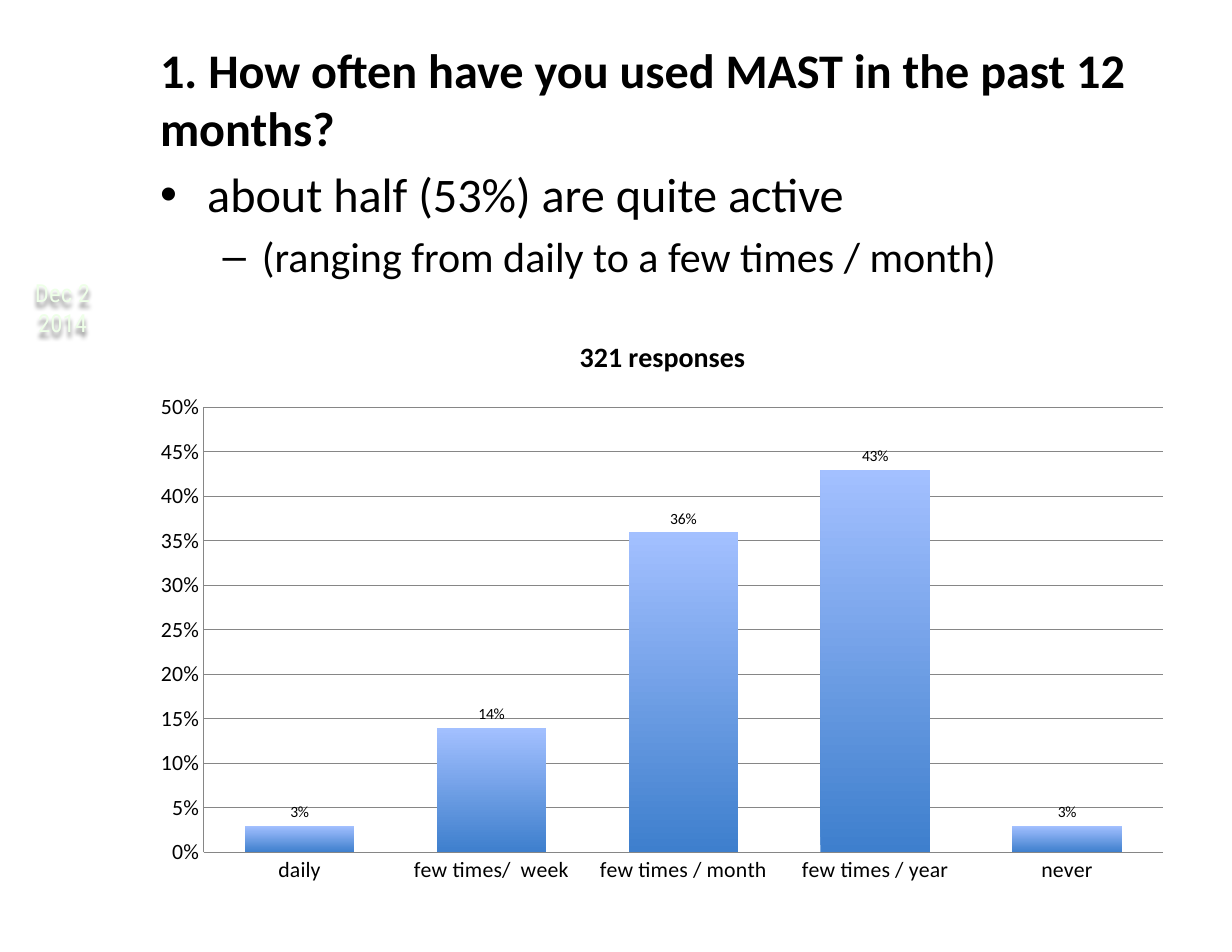
"""Build the survey slide on how often MAST is used."""
from lxml import etree
from pptx import Presentation, util as u
from pptx.chart import data as cd
from pptx.dml import color as dc
from pptx.enum import chart as ce, text as te
from pptx.oxml import ns, parse_xml

TITLE = "1. How often have you used MAST in the past 12 months?"
DATE = "Dec 2 2014"
BODY = [
    ("about half (53%) are quite active", "•", 31, 1.07, -1.07, 0),
    ("(ranging from daily to a few times / month)", "–", 27, 2.31, -0.89, 5.4),
]
HEAD = "321 responses"
RATES = {"daily": 0.03, "few times/  week": 0.14, "few times / month": 0.36,
         "few times / year": 0.43, "never": 0.03}
PLOT = {"x": 0.06, "y": 0.16, "w": 0.92, "h": 0.77}
BOXES = {"date": (0.1, 6.15, 2.64, 1.65), "title": (3.35, 0, 23.19, 4.47),
         "body": (3.35, 3.58, 23.19, 3.4), "chart": (3.2, 7.14, 23.65, 13.11)}
BLACK, GREY = "000000", "868686"


def rgb(code):
    return dc.RGBColor.from_string(code)


def put(obj, vals):
    for key, val in vals.items():
        setattr(obj, key, val)


def style(font, size, code=BLACK, bold=False, name="Calibri"):
    put(font, {"size": u.Pt(size), "bold": bold, "name": name})
    font.color.rgb = rgb(code)


def place(name):
    return [u.Cm(n) for n in BOXES[name]]


def frame(shape, anchor):
    tf = shape.text_frame
    put(tf, {"word_wrap": True, "auto_size": te.MSO_AUTO_SIZE.NONE,
             "vertical_anchor": anchor,
             "margin_left": u.Cm(0.28), "margin_right": u.Cm(0.28),
             "margin_top": u.Cm(0.15), "margin_bottom": u.Cm(0.15)})
    return tf


def add_title(slide):
    box = slide.shapes.title
    put(box, dict(zip(("left", "top", "width", "height"), place("title"))))
    tf = frame(box, te.MSO_ANCHOR.MIDDLE)
    tf.text = TITLE
    para = tf.paragraphs[0]
    para.alignment = te.PP_ALIGN.LEFT
    style(para.runs[0].font, 31, bold=True)


def add_date(slide):
    box = slide.shapes.add_textbox(*place("date"))
    tf = frame(box, te.MSO_ANCHOR.TOP)
    para = tf.paragraphs[0]
    para.alignment = te.PP_ALIGN.CENTER
    run = para.add_run()
    run.text = DATE
    style(run.font, 16, "EEFFE8", name="Roboto Condensed")
    box._element.spPr.append(parse_xml(
        f'<a:effectLst {ns.nsdecls("a")}><a:outerShdw blurRad="38100" dist="38100" '
        'dir="5400000" algn="t" rotWithShape="0"><a:srgbClr val="000000">'
        '<a:alpha val="50000"/></a:srgbClr></a:outerShdw></a:effectLst>'))


def add_body(slide):
    tf = frame(slide.shapes.add_textbox(*place("body")), te.MSO_ANCHOR.TOP)
    for i, (words, mark, size, left, hang, gap) in enumerate(BODY):
        para = tf.add_paragraph() if i else tf.paragraphs[0]
        para.level = i
        props = para._p.get_or_add_pPr()
        props.set("marL", str(u.Cm(left)))
        props.set("indent", str(u.Cm(hang)))
        para.space_before = u.Pt(gap)
        etree.SubElement(props, ns.qn("a:buFont"), typeface="Arial")
        etree.SubElement(props, ns.qn("a:buChar"), char=mark)
        run = para.add_run()
        run.text = words
        style(run.font, size)


def add_chart(slide):
    data = cd.CategoryChartData(number_format="0%")
    data.categories = list(RATES)
    data.add_series("Series 1", list(RATES.values()))
    chart = slide.shapes.add_chart(
        ce.XL_CHART_TYPE.COLUMN_CLUSTERED, *place("chart"), data).chart
    style(chart.font, 10)
    put(chart, {"has_legend": False, "has_title": True})
    chart.chart_title.text_frame.text = HEAD
    style(chart.chart_title.text_frame.paragraphs[0].runs[0].font, 18, bold=True)

    for axis in (chart.category_axis, chart.value_axis):
        put(axis, {"major_tick_mark": ce.XL_TICK_MARK.NONE,
                   "minor_tick_mark": ce.XL_TICK_MARK.NONE})
        style(axis.tick_labels.font, 14)
        axis.format.line.color.rgb = rgb(GREY)
    axis = chart.value_axis
    put(axis, {"minimum_scale": 0, "maximum_scale": 0.5, "major_unit": 0.05,
               "has_major_gridlines": True})
    put(axis.tick_labels, {"number_format": "0%", "number_format_is_linked": False})
    axis.major_gridlines.format.line.color.rgb = rgb(GREY)

    plot = chart.plots[0]
    put(plot, {"gap_width": 75, "vary_by_categories": False, "has_data_labels": True})
    put(plot.data_labels, {"show_value": True, "number_format": "0%",
                           "number_format_is_linked": False,
                           "position": ce.XL_LABEL_POSITION.OUTSIDE_END})
    style(plot.data_labels.font, 10)
    fill = plot.series[0].format.fill
    fill.gradient()
    fill.gradient_angle = 90
    for stop, code in zip(fill.gradient_stops, ("3E7FCD", "A3C0FF")):
        stop.color.rgb = rgb(code)

    area = chart._chartSpace.chart.plotArea
    for old in area.findall(ns.qn("c:layout")):
        area.remove(old)
    modes = "".join(f'<c:{k}Mode val="edge"/>' for k in "xy")
    sizes = "".join(f'<c:{k} val="{v}"/>' for k, v in PLOT.items())
    area.insert(0, parse_xml(
        f'<c:layout {ns.nsdecls("c")}><c:manualLayout><c:layoutTarget val="inner"/>'
        f'{modes}{sizes}</c:manualLayout></c:layout>'))


def main():
    prs = Presentation()
    put(prs, {"slide_width": u.Cm(27.94), "slide_height": u.Cm(21.59)})
    slide = prs.slides.add_slide(prs.slide_layouts[5])
    for add in (add_date, add_title, add_body, add_chart):
        add(slide)
    prs.save("out.pptx")


if __name__ == "__main__":
    main()
